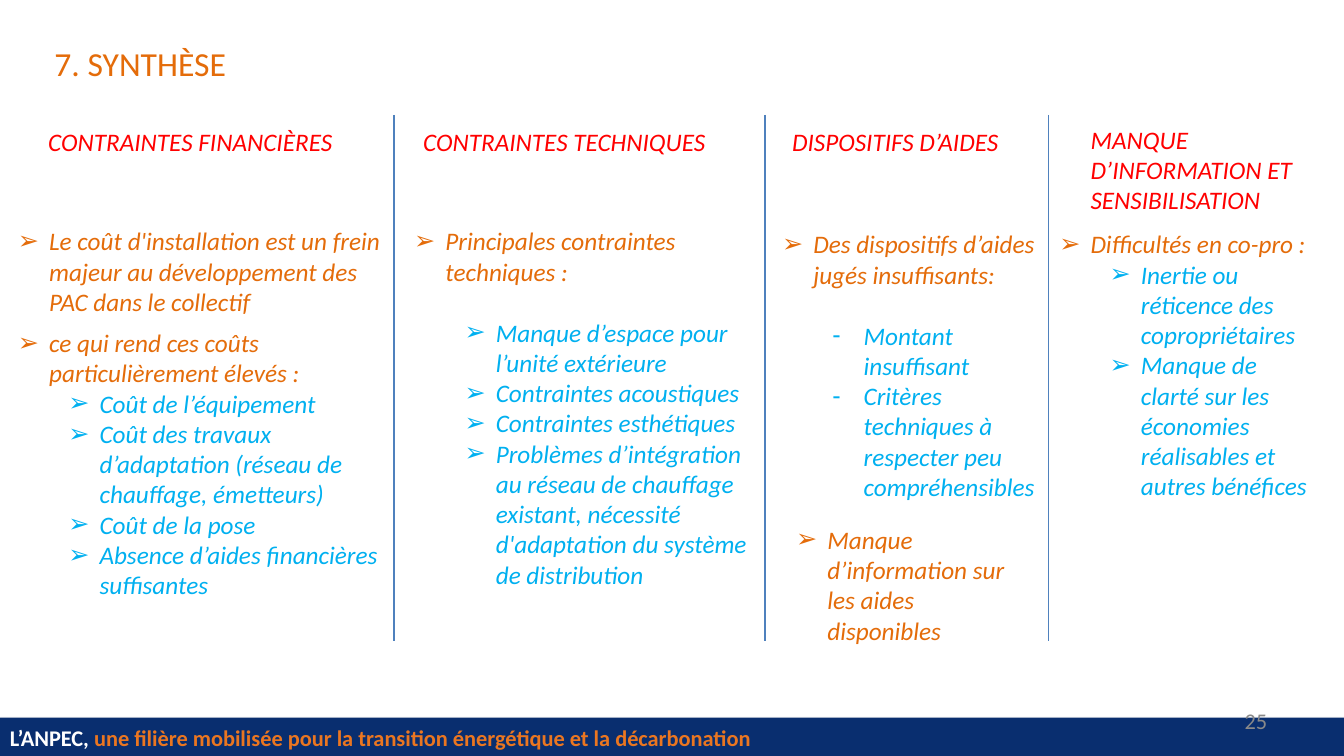
from lxml.etree import SubElement as Sub
from pptx import Presentation
from pptx.dml.color import RGBColor
from pptx.enum.shapes import MSO_CONNECTOR as Conn, MSO_SHAPE as Kind
from pptx.enum.text import MSO_ANCHOR as Anchor, MSO_AUTO_SIZE as Auto, PP_ALIGN as Align
from pptx.oxml.ns import qn
from pptx.util import Inches, Pt

WIDE, HIGH = Inches(13.33), Inches(7.5)
FONT = "Calibri"
ORANGE = RGBColor(0xE4, 0x6C, 0x0A)
CYAN = RGBColor(0x00, 0xB0, 0xF0)
RED = RGBColor(0xFF, 0x00, 0x00)
NAVY = RGBColor(0x09, 0x2E, 0x6F)
AMBER = RGBColor(0xEA, 0x76, 0x21)
WHITE = RGBColor(0xFF, 0xFF, 0xFF)
GREY = RGBColor(0x89, 0x89, 0x89)
BLUE = RGBColor(0x4F, 0x81, 0xBD)

HEADS = [
    ("CONTRAINTES FINANCIÈRES", (2.85, 16.1, 24.6, 5.33)),
    ("CONTRAINTES TECHNIQUES", (30.75, 16, 25.13, 5.33)),
    ("DISPOSITIFS D’AIDES", (58.2, 16, 17.4, 5.33)),
    ("MANQUE D’INFORMATION ET SENSIBILISATION", (80.4, 15.73, 17.25, 13.47)),
]
RULES = [29.33, 56.93, 78]
LISTS = [
    ((0.6, 29.2, 28.65, 13.47), "➢", 0,
     "Le coût d'installation est un frein majeur au développement des PAC dans le collectif", []),
    ((0.6, 42.67, 28.65, 37.73), "➢", 0,
     "ce qui rend ces coûts particulièrement élevés :",
     ["Coût de l’équipement",
      "Coût des travaux d’adaptation (réseau de chauffage, émetteurs)",
      "Coût de la pose",
      "Absence d’aides financières suffisantes"]),
    ((30.08, 29.2, 27.9, 49.87), "➢", 22,
     "Principales contraintes techniques :",
     ["Manque d’espace pour l’unité extérieure",
      "Contraintes acoustiques",
      "Contraintes esthétiques",
      "Problèmes d’intégration au réseau de chauffage existant, "
      "nécessité d'adaptation du système de distribution"]),
    ((57.45, 29.6, 20.55, 41.73), "-", 22,
     "Des dispositifs d’aides jugés insuffisants:",
     ["Montant insuffisant",
      "Critères techniques à respecter peu compréhensibles"]),
    ((58.5, 68.67, 17.48, 17.47), "➢", 0,
     "Manque d’information sur les aides disponibles", []),
    ((78.08, 29.6, 20.25, 37.73), "➢", 0,
     "Difficultés en co-pro :",
     ["Inertie ou réticence des copropriétaires",
      "Manque de clarté sur les économies réalisables et autres bénéfices"]),
]


def area(x, y, w, h):
    return [int(side * part / 100) for side, part in zip((WIDE, HIGH) * 2, (x, y, w, h))]


def style(run, size, color, bold=False, slant=False):
    font = run.font
    font.name, font.size = FONT, Pt(size)
    font.bold, font.italic = bold, slant
    font.color.rgb = color


def label(slide, place, text, size, color, slant=False, anchor=Anchor.TOP):
    frame = slide.shapes.add_textbox(*area(*place)).text_frame
    frame.word_wrap = True
    frame.vertical_anchor = anchor
    frame.text = text
    style(frame.paragraphs[0].runs[0], size, color, slant=slant)
    return frame


def bullet(para, mark, level):
    para.level = level
    props = para._p.get_or_add_pPr()
    props.set("marL", str(Inches(0.31 + level / 2)))
    props.set("indent", str(-Inches(0.31)))
    Sub(props, qn("a:buFont"), typeface="Arial")
    Sub(props, qn("a:buChar"), char=mark)


def points(slide, place, mark, gap, lead, items):
    frame = label(slide, place, lead, 18, ORANGE, slant=True)
    bullet(frame.paragraphs[0], "➢", 0)
    for rank, item in enumerate(items):
        para = frame.add_paragraph()
        para.text = item
        bullet(para, mark, 1)
        style(para.runs[0], 18, CYAN, slant=True)
        if rank == 0 and gap:
            para.space_before = Pt(gap)


def rule(slide, x):
    left, top, _, foot = area(x, 15.2, 0, 84.8)
    line = slide.shapes.add_connector(Conn.STRAIGHT, left, top, left, foot)
    line.line.color.rgb = BLUE
    line.line.width = Pt(1)
    Sub(line._element.spPr, qn("a:effectLst"))


def title(slide, text):
    head = slide.shapes.title
    head.left, head.top, head.width, head.height = area(3.3, 5.07, 94.65, 6.67)
    frame = head.text_frame
    frame.text = text
    frame.word_wrap = True
    frame.auto_size = Auto.NONE
    frame.vertical_anchor = Anchor.TOP
    frame.paragraphs[0].alignment = Align.LEFT
    style(frame.paragraphs[0].runs[0], 24, ORANGE)


def footer(slide):
    bar = slide.shapes.add_shape(Kind.RECTANGLE, *area(0, 94.93, 100, 5.07))
    bar.fill.solid()
    bar.fill.fore_color.rgb = NAVY
    bar.line.fill.background()
    bar.shadow.inherit = False
    glow = Sub(bar._element.spPr.find(qn("a:effectLst")), qn("a:outerShdw"),
               blurRad=str(Pt(3.1)), dist=str(Pt(1.8)), dir="5400000", rotWithShape="0")
    Sub(Sub(glow, qn("a:srgbClr"), val="000000"), qn("a:alpha"), val="35000")
    frame = label(slide, (0, 94.93, 95.7, 5.33), "L’ANPEC, ", 16, WHITE, anchor=Anchor.MIDDLE)
    para = frame.paragraphs[0]
    para.runs[0].font.bold = True
    motto = para.add_run()
    motto.text = "une filière mobilisée pour la transition énergétique et la décarbonation"
    style(motto, 16, AMBER, bold=True)
    page = label(slide, (71.7, 92.67, 23.33, 5.33), "25", 16, GREY, anchor=Anchor.MIDDLE)
    page.paragraphs[0].alignment = Align.RIGHT


def main():
    deck = Presentation()
    deck.slide_width, deck.slide_height = WIDE, HIGH
    slide = deck.slides.add_slide(deck.slide_layouts.get_by_name("Title Only"))
    title(slide, "7. SYNTHÈSE")
    footer(slide)
    for text, place in HEADS:
        label(slide, place, text, 18, RED, slant=True)
    for x in RULES:
        rule(slide, x)
    for entry in LISTS:
        points(slide, *entry)
    deck.save("out.pptx")


if __name__ == "__main__":
    main()
